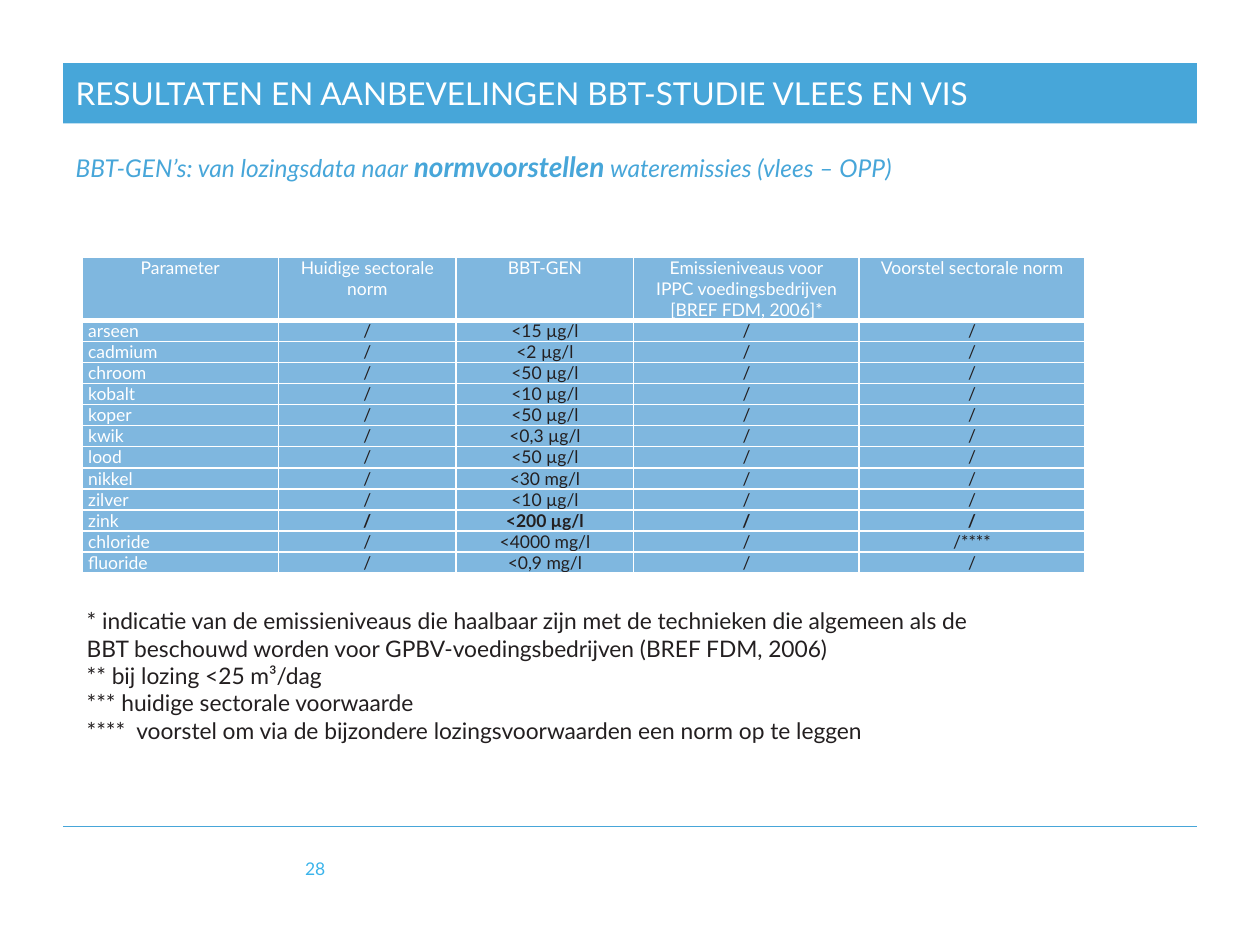
from lxml.etree import SubElement
from pptx import Presentation
from pptx.dml.color import RGBColor
from pptx.enum.shapes import MSO_CONNECTOR
from pptx.enum.text import MSO_ANCHOR, MSO_AUTO_SIZE, PP_ALIGN
from pptx.oxml.ns import qn
from pptx.util import Inches, Pt

# Content
TITLE = "RESULTATEN EN AANBEVELINGEN BBT-STUDIE VLEES EN VIS"
SUBTITLE = [  # text, size, bold
    ("BBT-GEN’s: van lozingsdata naar ", 14, False),
    ("normvoorstellen", 16, True),
    (" wateremissies (vlees – OPP)", 14, False),
]
HEADERS = [
    ["Parameter"],
    ["Huidige sectorale norm"],
    ["BBT-GEN"],
    ["Emissieniveaus voor", "IPPC voedingsbedrijven [BREF FDM, 2006]*"],
    ["Voorstel sectorale norm"],
]
LIMITS = [
    ("arseen", "<15 µg/l"),
    ("cadmium", "<2 µg/l"),
    ("chroom", "<50 µg/l"),
    ("kobalt", "<10 µg/l"),
    ("koper", "<50 µg/l"),
    ("kwik", "<0,3 µg/l"),
    ("lood", "<50 µg/l"),
    ("nikkel", "<30 mg/l"),
    ("zilver", "<10 µg/l"),
    ("zink", "<200 µg/l"),
    ("chloride", "<4000 mg/l"),
    ("fluoride", "<0,9 mg/l"),
]
PROPOSALS = {"chloride": "/****"}
EMPHASIZED = "zink"
FOOTNOTES = [
    "* indicatie van de emissieniveaus die haalbaar zijn met de technieken die "
    "algemeen als de BBT beschouwd worden voor GPBV-voedingsbedrijven (BREF FDM, 2006)",
    "** bij lozing <25 m³/dag",
    "*** huidige sectorale voorwaarde",
    "****  voorstel om via de bijzondere lozingsvoorwaarden een norm op te leggen",
]
PAGE_NUMBER = "28"

# Style
FONT = "Lato"
WHITE = RGBColor(0xFF, 0xFF, 0xFF)
BLUE = RGBColor(0x47, 0xA6, 0xD9)
PAGE_BLUE = RGBColor(0x3B, 0xB4, 0xEB)
CELL_BLUE = RGBColor(0x00, 0x70, 0xC0)
INK = RGBColor(0x23, 0x1F, 0x20)
COLUMN_WIDTHS = [1.56, 1.41, 1.41, 1.79, 1.79]
HEADER_HEIGHT, ROW_HEIGHT = 0.45, 0.15


def add_run(paragraph, text, size, color, bold=False, italic=False):
    run = paragraph.add_run()
    run.text = text
    run.font.name, run.font.size = FONT, Pt(size)
    run.font.bold, run.font.italic = bold, italic
    run.font.color.rgb = color


def place(shape, left, top, width, height):
    shape.left, shape.top = Inches(left), Inches(top)
    shape.width, shape.height = Inches(width), Inches(height)


def add_lines(frame, lines, size, color, align, bold=False):
    for i, line in enumerate(lines):
        paragraph = frame.add_paragraph() if i else frame.paragraphs[0]
        paragraph.alignment = align
        add_run(paragraph, line, size, color, bold)


def style_cell(cell, bottom_width):
    cell.margin_left = cell.margin_right = Inches(0.05)
    cell.margin_top = cell.margin_bottom = 0
    properties = cell._tc.get_or_add_tcPr()
    for side, width in (("lnL", 1), ("lnR", 1), ("lnT", 1), ("lnB", bottom_width)):
        border = SubElement(properties, qn(f"a:{side}"), w=str(Pt(width)))
        SubElement(SubElement(border, qn("a:solidFill")), qn("a:srgbClr"), val=str(WHITE))
    cell.fill.solid()
    cell.fill.fore_color.rgb = CELL_BLUE
    color = properties.find(qn("a:solidFill")).find(qn("a:srgbClr"))
    SubElement(color, qn("a:alpha"), val="50000")


deck = Presentation()
deck.slide_width, deck.slide_height = Inches(10), Inches(7.5)
slide = deck.slides.add_slide(deck.slide_layouts[1])

# Footer rule
rule = slide.shapes.add_connector(
    MSO_CONNECTOR.STRAIGHT, Inches(0.5), Inches(6.56), Inches(9.5), Inches(6.56))
rule.line.color.rgb = BLUE
rule.line.width = Pt(0.5)
SubElement(rule._element.spPr, qn("a:effectLst"))

# Title bar
title = slide.shapes.title
place(title, 0.5, 0.5, 9, 0.48)
title.fill.solid()
title.fill.fore_color.rgb = BLUE
title.text_frame.auto_size = MSO_AUTO_SIZE.NONE
title.text_frame.vertical_anchor = MSO_ANCHOR.MIDDLE
add_lines(title.text_frame, [TITLE], 18, WHITE, PP_ALIGN.LEFT)

# Subtitle
subtitle = slide.placeholders[1]
place(subtitle, 0.5, 1.14, 9, 0.78)
subtitle.text_frame.auto_size = MSO_AUTO_SIZE.NONE
heading = subtitle.text_frame.paragraphs[0]
heading_properties = heading._p.get_or_add_pPr()
heading_properties.set("marL", "0")
heading_properties.set("indent", "0")
SubElement(heading_properties, qn("a:buNone"))
heading.space_before = Pt(0)
for text, size, bold in SUBTITLE:
    add_run(heading, text, size, BLUE, bold, italic=True)

# Page number
page = slide.shapes.add_textbox(Inches(1.99), Inches(6.69), Inches(0.69), Inches(0.4))
page.text_frame.word_wrap = True
page.text_frame.vertical_anchor = MSO_ANCHOR.MIDDLE
add_lines(page.text_frame, [PAGE_NUMBER], 10, PAGE_BLUE, PP_ALIGN.RIGHT)

# Table of limits
table = slide.shapes.add_table(
    len(LIMITS) + 1, len(HEADERS), Inches(0.65), Inches(2.04),
    Inches(sum(COLUMN_WIDTHS)), Inches(HEADER_HEIGHT + ROW_HEIGHT * len(LIMITS))).table
table.first_row = table.horz_banding = False
for column, width in zip(table.columns, COLUMN_WIDTHS):
    column.width = Inches(width)
for i, row in enumerate(table.rows):
    row.height = Inches(ROW_HEIGHT if i else HEADER_HEIGHT)

for c, lines in enumerate(HEADERS):
    style_cell(table.cell(0, c), bottom_width=3)
    add_lines(table.cell(0, c).text_frame, lines, 10, WHITE, PP_ALIGN.CENTER)
for r, (parameter, limit) in enumerate(LIMITS, start=1):
    values = [parameter, "/", limit, "/", PROPOSALS.get(parameter, "/")]
    for c, value in enumerate(values):
        cell = table.cell(r, c)
        style_cell(cell, bottom_width=1)
        if c == 0:
            add_lines(cell.text_frame, [value], 10, WHITE, PP_ALIGN.JUSTIFY)
        else:
            add_lines(cell.text_frame, [value], 10, INK, PP_ALIGN.CENTER,
                      bold=parameter == EMPHASIZED)

# Footnotes
notes = slide.shapes.add_textbox(Inches(0.59), Inches(4.77), Inches(7.4), Inches(1.4))
notes.text_frame.word_wrap = True
notes.text_frame.auto_size = MSO_AUTO_SIZE.SHAPE_TO_FIT_TEXT
add_lines(notes.text_frame, FOOTNOTES, 13, INK, PP_ALIGN.LEFT)

deck.save("out.pptx")
